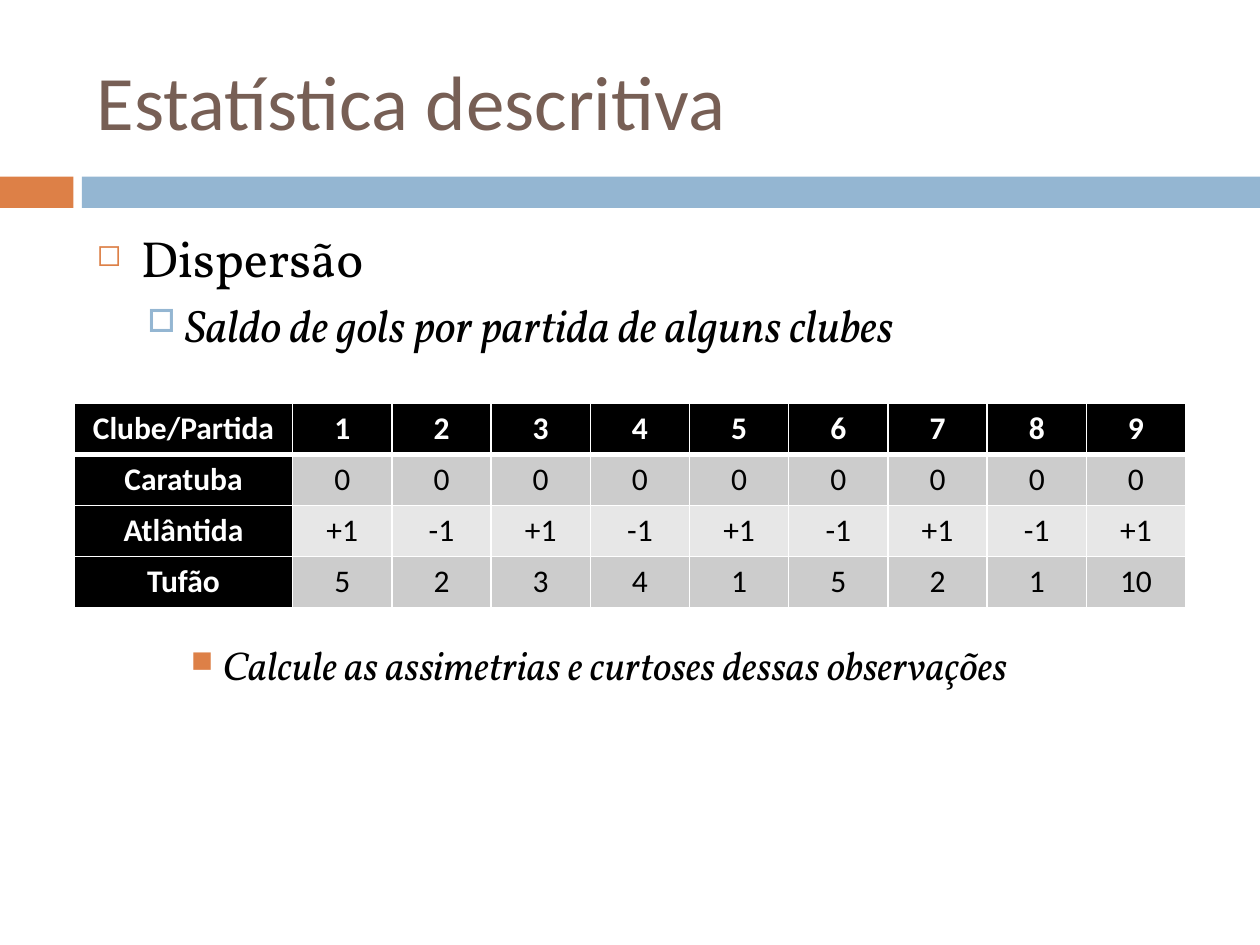
from dataclasses import dataclass

from lxml import etree
from pptx import Presentation
from pptx import util as u
from pptx.dml.color import RGBColor
from pptx.enum import shapes, text
from pptx.oxml import ns


@dataclass(frozen=True)
class Theme:
    title: str = "775F55"
    orange: str = "DD8047"
    blue: str = "94B6D2"
    ink: str = "000000"
    paper: str = "FFFFFF"
    band_dark: str = "CCCCCC"
    band_light: str = "E7E7E7"
    sans: str = "Calibri"
    serif: str = "Vollkorn"
    title_pt: float = 44
    table_pt: float = 18
    rule_pt: float = 1
    header_rule_pt: float = 3


@dataclass(frozen=True)
class Box:
    left: float
    top: float
    width: float
    height: float

    def emu(self) -> tuple:
        return tuple(u.Cm(v) for v in (self.left, self.top, self.width, self.height))


@dataclass(frozen=True)
class Bullet:
    words: str
    size: float
    italic: bool
    level: int
    margin: float
    hanging: float
    before: float
    mark: str
    color: str
    percent: int


T = Theme()
TITLE = Box(1.7, 0.64, 22.66, 2.74)
BODY = Box(1.7, 4.45, 22.66, 13.28)
BARS = ((Box(0, 3.56, 1.48, 0.63), T.orange), (Box(1.65, 3.56, 23.75, 0.63), T.blue))
BULLETS = (
    Bullet("Dispersão", 29, False, 0, 0.89, 0.89, 7, "◻", T.orange, 60),
    Bullet("Saldo de gols por partida de alguns clubes", 26, True, 1,
           1.78, 0.76, 5.5, "□", T.blue, 70),
    Bullet("Calcule as assimetrias e curtoses dessas observações", 23, True, 2,
           2.54, 0.64, 165, "■", T.orange, 75),
)
GOALS = (
    ("Clube/Partida", *range(1, 10)),
    ("Caratuba", *[0] * 9),
    ("Atlântida", *["+1" if i % 2 == 0 else "-1" for i in range(9)]),
    ("Tufão", 5, 2, 3, 4, 1, 5, 2, 1, 10),
)
TABLE_LEFT, TABLE_TOP = 1.5, 8.13
CLUB_W, MATCH_W, ROW_H = 4.4, 2.0, 1.03


def add_run(p, words: str, size: float, font: str, color: str,
            bold: bool = False, italic: bool = False) -> None:
    r = p.add_run()
    r.text = words
    r.font.size = u.Pt(size)
    r.font.name = font
    r.font.bold = bold
    r.font.italic = italic
    r.font.color.rgb = RGBColor.from_string(color)


def add_bar(s, box: Box, color: str) -> None:
    sp = s.shapes.add_shape(shapes.MSO_SHAPE.RECTANGLE, *box.emu())
    sp.shadow.inherit = False
    sp.fill.solid()
    sp.fill.fore_color.rgb = RGBColor.from_string(color)
    sp.line.fill.background()


def add_frame(s, box: Box, anchor):
    tf = s.shapes.add_textbox(*box.emu()).text_frame
    tf.word_wrap = True
    tf.vertical_anchor = anchor
    return tf


def add_bullet(p, b: Bullet) -> None:
    p.level = b.level
    p.space_before = u.Pt(b.before)
    add_run(p, b.words, b.size, T.serif, T.ink, italic=b.italic)
    pPr = p._p.get_or_add_pPr()
    pPr.set("marL", str(u.Cm(b.margin)))
    pPr.set("indent", str(-u.Cm(b.hanging)))
    clr = etree.SubElement(pPr, ns.qn("a:buClr"))
    etree.SubElement(clr, ns.qn("a:srgbClr"), val=b.color)
    etree.SubElement(pPr, ns.qn("a:buSzPct"), val=str(b.percent * 1000))
    etree.SubElement(pPr, ns.qn("a:buChar"), char=b.mark)


def set_borders(cell, top: float, bottom: float) -> None:
    tcPr = cell._tc.get_or_add_tcPr()
    widths = {"lnL": T.rule_pt, "lnR": T.rule_pt, "lnT": top, "lnB": bottom}
    for i, (side, width) in enumerate(widths.items()):
        ln = etree.Element(ns.qn(f"a:{side}"), w=str(u.Pt(width)))
        fill = etree.SubElement(ln, ns.qn("a:solidFill"))
        etree.SubElement(fill, ns.qn("a:srgbClr"), val=T.paper)
        tcPr.insert(i, ln)


def fill_cell(cell, row: int, col: int, words: str) -> None:
    heading = row == 0 or col == 0
    band = T.band_dark if row % 2 else T.band_light
    cell.fill.solid()
    cell.fill.fore_color.rgb = RGBColor.from_string(T.ink if heading else band)
    cell.vertical_anchor = text.MSO_ANCHOR.MIDDLE
    p = cell.text_frame.paragraphs[0]
    p.alignment = text.PP_ALIGN.CENTER
    add_run(p, words, T.table_pt, T.sans, T.paper if heading else T.ink, bold=heading)
    set_borders(cell, T.header_rule_pt if row == 1 else T.rule_pt,
                T.header_rule_pt if row == 0 else T.rule_pt)


def add_goals(s) -> None:
    rows, cols = len(GOALS), len(GOALS[0])
    box = Box(TABLE_LEFT, TABLE_TOP, CLUB_W + MATCH_W * (cols - 1), ROW_H * rows)
    table = s.shapes.add_table(rows, cols, *box.emu()).table
    for c, column in enumerate(table.columns):
        column.width = u.Cm(MATCH_W if c else CLUB_W)
    for r, values in enumerate(GOALS):
        table.rows[r].height = u.Cm(ROW_H)
        for c, value in enumerate(values):
            fill_cell(table.cell(r, c), r, c, str(value))


def main() -> None:
    prs = Presentation()
    prs.slide_width, prs.slide_height = u.Cm(25.4), u.Cm(19.05)
    s = prs.slides.add_slide(prs.slide_layouts[6])
    for box, color in BARS:
        add_bar(s, box, color)
    tf = add_frame(s, TITLE, text.MSO_ANCHOR.MIDDLE)
    add_run(tf.paragraphs[0], "Estatística descritiva", T.title_pt, T.sans, T.title)
    tf = add_frame(s, BODY, text.MSO_ANCHOR.TOP)
    for i, bullet in enumerate(BULLETS):
        add_bullet(tf.add_paragraph() if i else tf.paragraphs[0], bullet)
    add_goals(s)
    prs.save("out.pptx")


if __name__ == "__main__":
    main()
